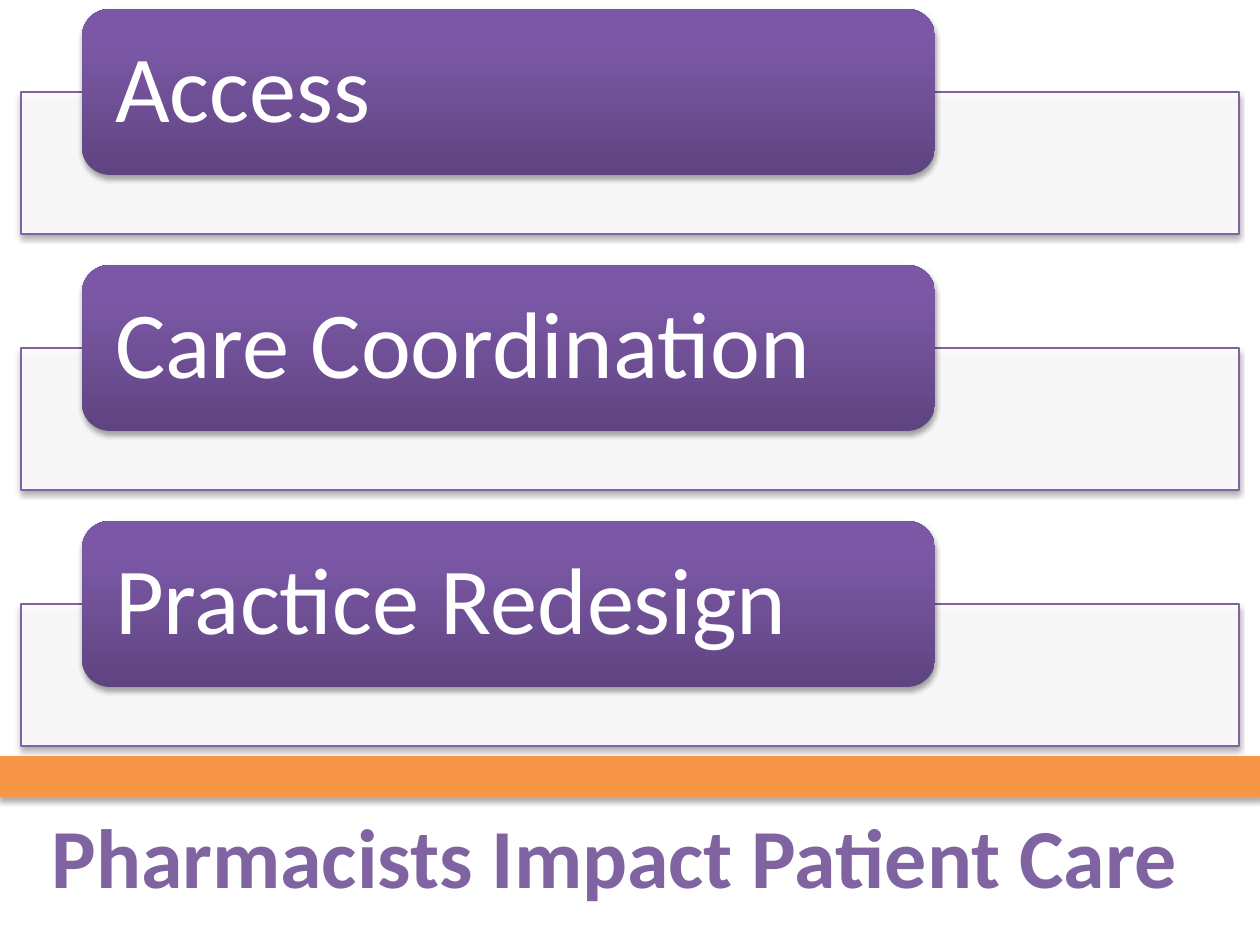
"""Build the slide on how pharmacists impact patient care."""
from typing import NamedTuple, Optional

from lxml.etree import SubElement
from pptx import Presentation
from pptx.dml.color import RGBColor
from pptx.enum.shapes import MSO_SHAPE as SHAPE
from pptx.enum.text import MSO_ANCHOR as ANCHOR, MSO_AUTO_SIZE as AUTO, PP_ALIGN as ALIGN
from pptx.oxml.ns import qn
from pptx.shapes.autoshape import Shape
from pptx.slide import Slide
from pptx.util import Emu, Pt

PX_PER_INCH = 126
FONT = "Calibri"
WHITE = RGBColor(0xFF, 0xFF, 0xFF)
BLACK = RGBColor(0, 0, 0)
PURPLE = RGBColor(0x80, 0x64, 0xA2)
ORANGE = RGBColor(0xF7, 0x96, 0x46)
TAB_STOPS = (
    (0, RGBColor(0x5F, 0x44, 0x80)),
    (80, RGBColor(0x7B, 0x58, 0xA6)),
    (100, RGBColor(0x7C, 0x57, 0xA8)),
)
TOPICS = ("Access", "Care Coordination", "Practice Redesign")
ROW_PITCH = 256


class Box(NamedTuple):
    left: int
    top: int
    width: int
    height: int

    def down(self, dy: int) -> "Box":
        return self._replace(top=self.top + dy)

    def emu(self) -> list[Emu]:
        return [px(v) for v in self]


class Shadow(NamedTuple):
    alpha: int
    blur: float
    dist: float


PANEL = Box(21, 92, 1218, 142)
TAB = Box(82, 9, 853, 166)
BAND = Box(0, 756, 1260, 41)
TITLE = Box(-42, 798, 1332, 115)
ROW_SHADOW = Shadow(35, 3.1, 1.8)
BAND_SHADOW = Shadow(32, 3.5, 2.2)


def px(value: int) -> Emu:
    return Emu(round(value * 914400 / PX_PER_INCH))


def add_color(parent, color: RGBColor, alpha: int = 100) -> None:
    clr = SubElement(parent, qn("a:srgbClr"), val=str(color))
    if alpha < 100:
        SubElement(clr, qn("a:alpha"), val=str(alpha * 1000))


def add_box(slide: Slide, kind: SHAPE, box: Box, shadow: Shadow,
            fill: Optional[RGBColor] = None, alpha: int = 100,
            line: Optional[RGBColor] = None) -> Shape:
    sp = slide.shapes.add_shape(kind, *box.emu())
    if fill is None:
        sp.fill.gradient()
        sp.fill.gradient_angle = 90
        stops = sp._element.spPr.find(".//" + qn("a:gsLst"))
        for old in list(stops):
            stops.remove(old)
        for pos, color in TAB_STOPS:
            add_color(SubElement(stops, qn("a:gs"), pos=str(pos * 1000)), color)
    else:
        sp.fill.solid()
        sp.fill.fore_color.rgb = fill
        clr = sp._element.spPr.find(qn("a:solidFill"))[0]
        if alpha < 100:
            SubElement(clr, qn("a:alpha"), val=str(alpha * 1000))
    if line is None:
        sp.line.fill.background()
    else:
        sp.line.color.rgb = line
        sp.line.width = Pt(0.75)
    sp.shadow.inherit = False
    effects = sp._element.spPr.find(qn("a:effectLst"))
    outer = SubElement(effects, qn("a:outerShdw"), blurRad=str(Pt(shadow.blur)),
                       dist=str(Pt(shadow.dist)), dir="5400000", rotWithShape="0")
    add_color(outer, BLACK, shadow.alpha)
    return sp


def write(sp: Shape, text: str, *, size: int, color: RGBColor, bold: bool = False,
          align: ALIGN = ALIGN.LEFT, anchor: ANCHOR = ANCHOR.TOP,
          spacing: float = 1.0) -> None:
    tf = sp.text_frame
    tf.word_wrap = True
    tf.vertical_anchor = anchor
    p = tf.paragraphs[0]
    p.alignment = align
    p.line_spacing = spacing
    r = p.add_run()
    r.text = text
    r.font.name = FONT
    r.font.size = Pt(size)
    r.font.bold = bold
    r.font.color.rgb = color


def add_topic(slide: Slide, row: int, topic: str) -> None:
    dy = row * ROW_PITCH
    add_box(slide, SHAPE.RECTANGLE, PANEL.down(dy), ROW_SHADOW,
            fill=WHITE, alpha=90, line=PURPLE)
    tab = add_box(slide, SHAPE.ROUNDED_RECTANGLE, TAB.down(dy), ROW_SHADOW)
    tf = tab.text_frame
    tf.margin_left = tf.margin_right = px(25)
    tf.margin_top = tf.margin_bottom = 0
    write(tab, topic, size=54, color=WHITE, anchor=ANCHOR.MIDDLE, spacing=0.9)


def main() -> None:
    prs = Presentation()
    prs.slide_width, prs.slide_height = px(1260), px(945)
    slide = prs.slides.add_slide(prs.slide_layouts[6])
    title = slide.shapes.add_textbox(*TITLE.emu())
    write(title, "Pharmacists Impact Patient Care ", size=48, color=PURPLE,
          bold=True, align=ALIGN.CENTER)
    title.text_frame.auto_size = AUTO.SHAPE_TO_FIT_TEXT
    add_box(slide, SHAPE.RECTANGLE, BAND, BAND_SHADOW, fill=ORANGE)
    for row, topic in enumerate(TOPICS):
        add_topic(slide, row, topic)
    prs.save("out.pptx")


if __name__ == "__main__":
    main()
